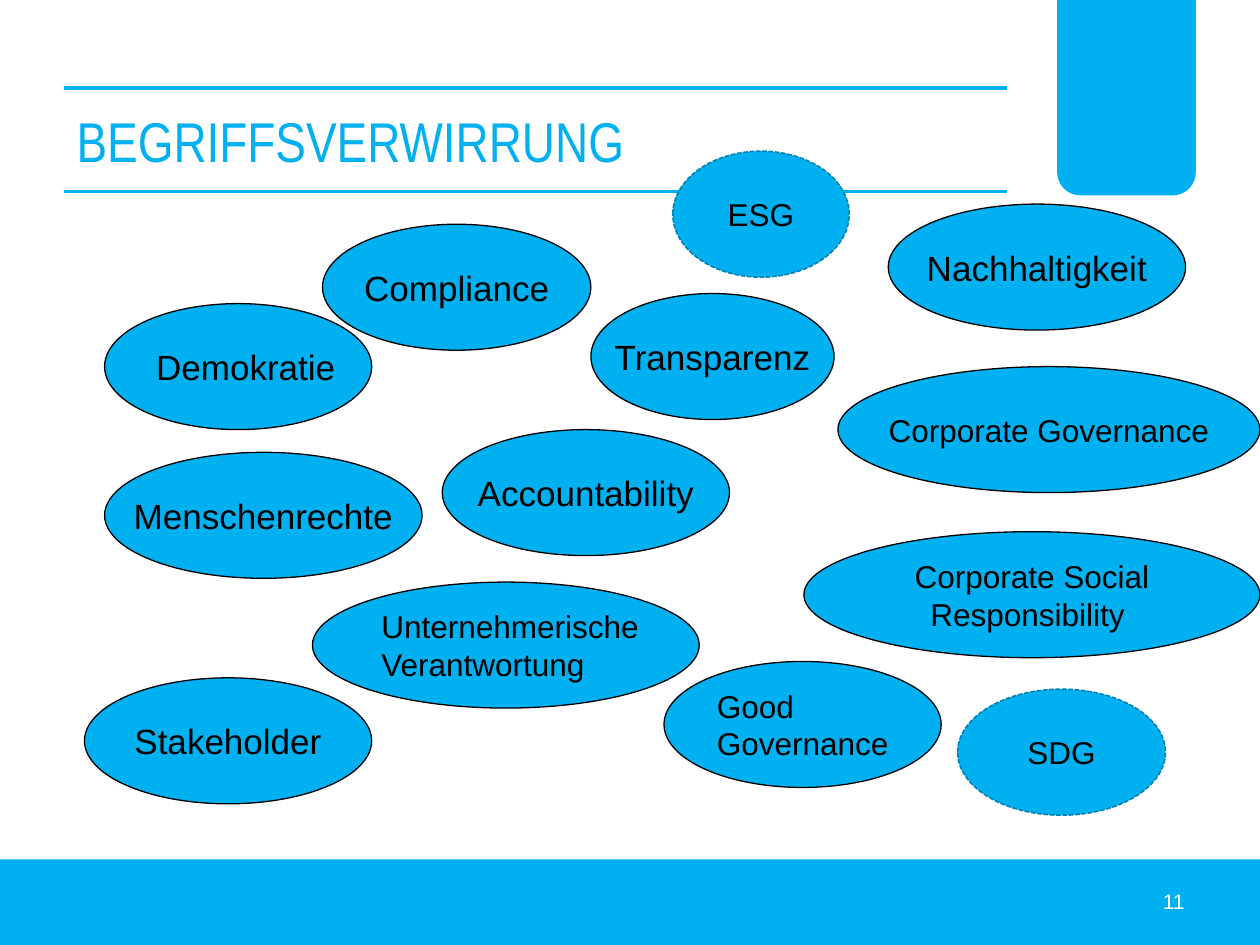
from lxml.etree import SubElement
from pptx import Presentation
from pptx.dml.color import RGBColor
from pptx.enum.dml import MSO_LINE
from pptx.enum.shapes import MSO_CONNECTOR, MSO_SHAPE
from pptx.enum.text import MSO_ANCHOR, PP_ALIGN
from pptx.oxml.ns import qn
from pptx.util import Inches, Pt

BLUE, DARK_BLUE, BLACK, WHITE = "00B0F0", "0082B2", "000000", "FFFFFF"
LEFT, CENTER, RIGHT = PP_ALIGN.LEFT, PP_ALIGN.CENTER, PP_ALIGN.RIGHT

TERMS = [
    ("Nachhaltigkeit", 7.05, 1.62, 2.36, 20, CENTER),
    ("Unternehmerische\nVerantwortung", 2.48, 4.62, 3.07, 18, LEFT),
    ("Menschenrechte", 0.83, 3.59, 2.52, 20, CENTER),
    ("Corporate Governance", 6.65, 2.91, 3.35, 18, CENTER),
    ("Good\nGovernance", 5.27, 5.25, 2.2, 18, LEFT),
    ("Transparenz", 4.69, 2.33, 1.93, 20, CENTER),
    ("Compliance", 2.56, 1.78, 2.13, 20, CENTER),
    ("Corporate Social\nResponsibility ", 6.38, 4.22, 3.62, 18, CENTER),
    ("Accountability", 3.51, 3.41, 2.28, 20, CENTER),
    ("Stakeholder", 0.67, 5.38, 2.28, 20, CENTER),
    ("Demokratie", 0.83, 2.41, 2.12, 20, LEFT),
]
GOALS = [("SDG", 7.6, 5.47, 1.65), ("ESG", 5.34, 1.2, 1.4)]


def color(value):
    return RGBColor.from_string(value)


def write(frame, text, size, ink=BLACK, font="Arial", align=LEFT, wrap=True):
    frame.word_wrap = wrap
    frame.vertical_anchor = MSO_ANCHOR.MIDDLE
    for index, line in enumerate(text.split("\n")):
        para = frame.add_paragraph() if index else frame.paragraphs[0]
        para.alignment = align
        span = para.add_run()
        span.text = line
        span.font.size = Pt(size)
        span.font.name = font
        span.font.color.rgb = color(ink)


def add_text(page, box, text, **style):
    frame = page.shapes.add_textbox(*map(Inches, box)).text_frame
    write(frame, text, **style)


def add_filled(page, kind, box):
    shape = page.shapes.add_shape(kind, *map(Inches, box))
    shape.shadow.inherit = False
    shape.fill.solid()
    shape.fill.fore_color.rgb = color(BLUE)
    shape.line.fill.background()
    return shape


def add_rule(page, left, top, width):
    ends = map(Inches, (left, top, left + width, top))
    rule = page.shapes.add_connector(MSO_CONNECTOR.STRAIGHT, *ends)
    rule.line.color.rgb = color(BLUE)
    rule.line.width = Pt(2.25)
    SubElement(rule._element.spPr, qn("a:effectLst"))


def add_header(page, left, top, width, height):
    for offset in (0, height):
        add_rule(page, left, top + offset, width)
    add_text(page, (left, top, width, height), "BEGRIFFSVERWIRRUNG",
             size=32, ink=BLUE, font="Arial Narrow")


def add_tab(page, box):
    tab = add_filled(page, MSO_SHAPE.ROUND_2_SAME_RECTANGLE, box)
    tab.rotation = 180


def add_footer(page, left, top, width, height):
    add_filled(page, MSO_SHAPE.RECTANGLE, (left, top, width, height))
    number_width = 2.33
    number_left = left + width - 0.5 - number_width
    add_text(page, (number_left, top + 0.13, number_width, 0.4), "11",
             size=12, ink=WHITE, align=RIGHT)


def add_bubble(page, box, text, outline=BLACK, weight=0.75, dash=None, **style):
    bubble = add_filled(page, MSO_SHAPE.OVAL, box)
    bubble.line.color.rgb = color(outline)
    bubble.line.width = Pt(weight)
    if dash is not None:
        bubble.line.dash_style = dash
    write(bubble.text_frame, text, **style)


def add_cloud(page, left, top):
    for text, x, y, width, size, align in TERMS:
        add_bubble(page, (left + x, top + y, width, 1), text,
                   size=size, align=align, wrap=False)
    for text, x, y, width in GOALS:
        add_bubble(page, (left + x, top + y, width, 1), text,
                   outline=DARK_BLUE, weight=0.9, dash=MSO_LINE.SQUARE_DOT,
                   size=18, align=CENTER)


def main():
    deck = Presentation()
    deck.slide_width, deck.slide_height = Inches(10), Inches(7.5)
    page = deck.slides.add_slide(deck.slide_layouts[6])
    add_footer(page, 0, 6.82, 10, 0.68)
    add_tab(page, (8.39, 0, 1.1, 1.55))
    add_header(page, 0.51, 0.7, 7.48, 0.82)
    add_cloud(page, 0, 0)
    deck.save("out.pptx")


if __name__ == "__main__":
    main()
